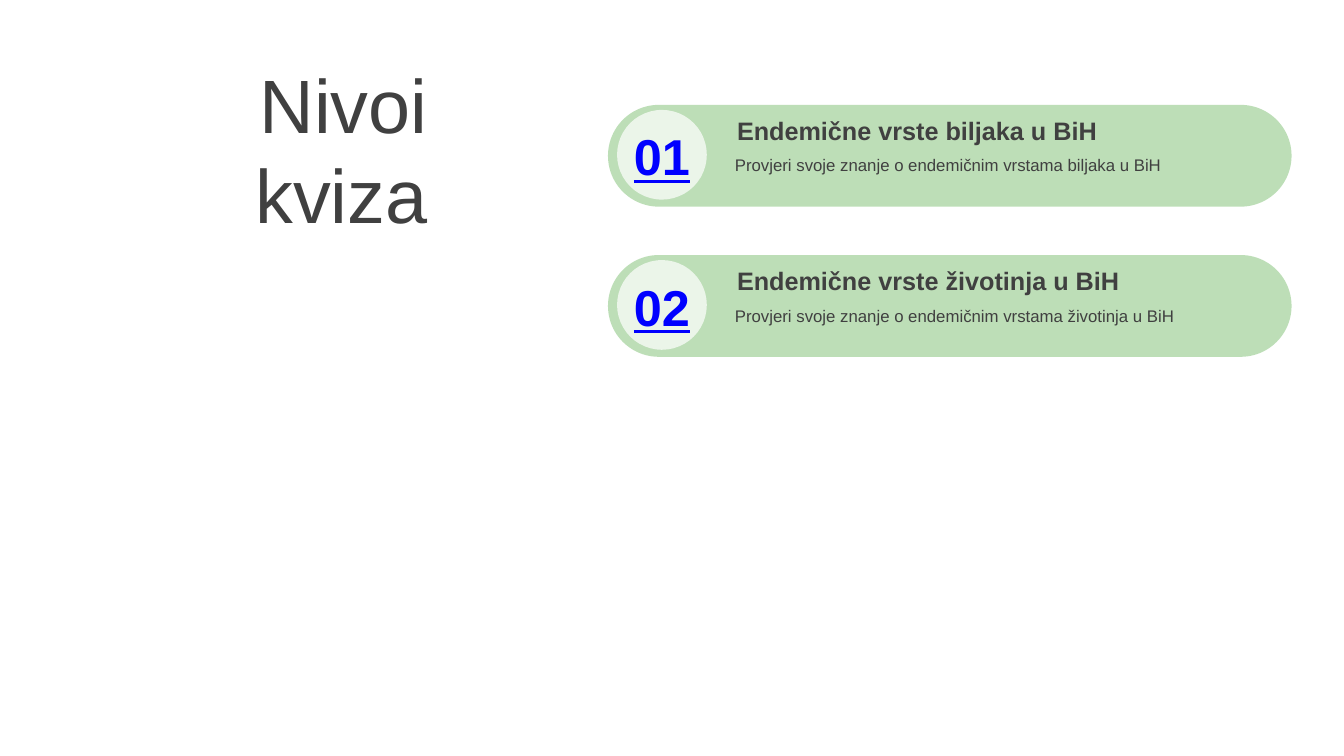
from pptx import Presentation, util as u
from pptx.dml.color import RGBColor
from pptx.enum import shapes, text
from pptx.oxml.ns import qn
from lxml import etree

HUES = {"ink": "404040", "leaf": "5AAE4C", "white": "FFFFFF", "link": "0000FF"}
FONT = "Arial"
LEVELS = [
    ("01", "Endemične vrste biljaka u BiH",
     "Provjeri svoje znanje o endemičnim vrstama biljaka u BiH"),
    ("02", "Endemične vrste životinja u BiH",
     "Provjeri svoje znanje o endemičnim vrstama životinja u BiH"),
]
TOP, STEP = 1.04, 1.49  # first level and distance to the next


def write(home, words, box, size, hue="ink", bold=False, line=False,
          align=text.PP_ALIGN.LEFT, anchor=text.MSO_ANCHOR.TOP, inset=0.1):
    """Add one text box."""
    frame = home.add_textbox(*map(u.Inches, box)).text_frame
    frame.word_wrap = True
    frame.vertical_anchor = anchor
    frame.margin_left = frame.margin_right = u.Inches(inset)
    par = frame.paragraphs[0]
    par.alignment = align
    run = par.add_run()
    run.text = words
    font = run.font
    font.name, font.size = FONT, u.Pt(size)
    font.bold, font.underline = bold, line
    font.color.rgb = RGBColor.from_string(HUES[hue])


def draw(home, kind, box, hue, share):
    """Add one borderless shape, share percent opaque."""
    shape = home.add_shape(kind, *map(u.Inches, box))
    shape.shadow.inherit = False
    shape.line.fill.background()
    shape.fill.solid()
    shape.fill.fore_color.rgb = RGBColor.from_string(HUES[hue])
    tint = shape._element.spPr.find(".//" + qn("a:srgbClr"))
    etree.SubElement(tint, qn("a:alpha")).set("val", str(share * 1000))
    return shape


def title(home, box):
    write(home, "Nivoi kviza", box, 54, align=text.PP_ALIGN.RIGHT,
          anchor=text.MSO_ANCHOR.MIDDLE)


def level(home, box, num, head, note):
    x, y, wide, high = box
    # Pill and disc
    pill = draw(home, shapes.MSO_SHAPE.ROUNDED_RECTANGLE, box, "leaf", 40)
    pill.adjustments[0] = 0.5
    draw(home, shapes.MSO_SHAPE.OVAL, (x + 0.09, y + 0.05, 0.89, 0.89),
         "white", 70)
    # Note, heading and number
    left, span = x + 1.16, wide - 1.68
    write(home, note, (left, y + 0.45, span, 0.3), 12)
    write(home, head, (left, y + 0.05, span, 0.4), 18, bold=True, inset=0.12)
    write(home, num, (x, y + 0.15, 1.07, 0.71), 36, hue="link", bold=True,
          line=True, align=text.PP_ALIGN.CENTER,
          anchor=text.MSO_ANCHOR.MIDDLE, inset=0.12)


def main():
    deck = Presentation()
    deck.slide_width, deck.slide_height = u.Inches(13.33), u.Inches(7.5)
    slide = deck.slides.add_slide(deck.slide_layouts[6])
    title(slide.shapes, (0.61, 0.41, 3.73, 2.12))
    for row, parts in enumerate(LEVELS):
        group = slide.shapes.add_group_shape()
        level(group.shapes, (6.03, TOP + row * STEP, 6.78, 1.01), *parts)
    deck.save("out.pptx")


if __name__ == "__main__":
    main()
